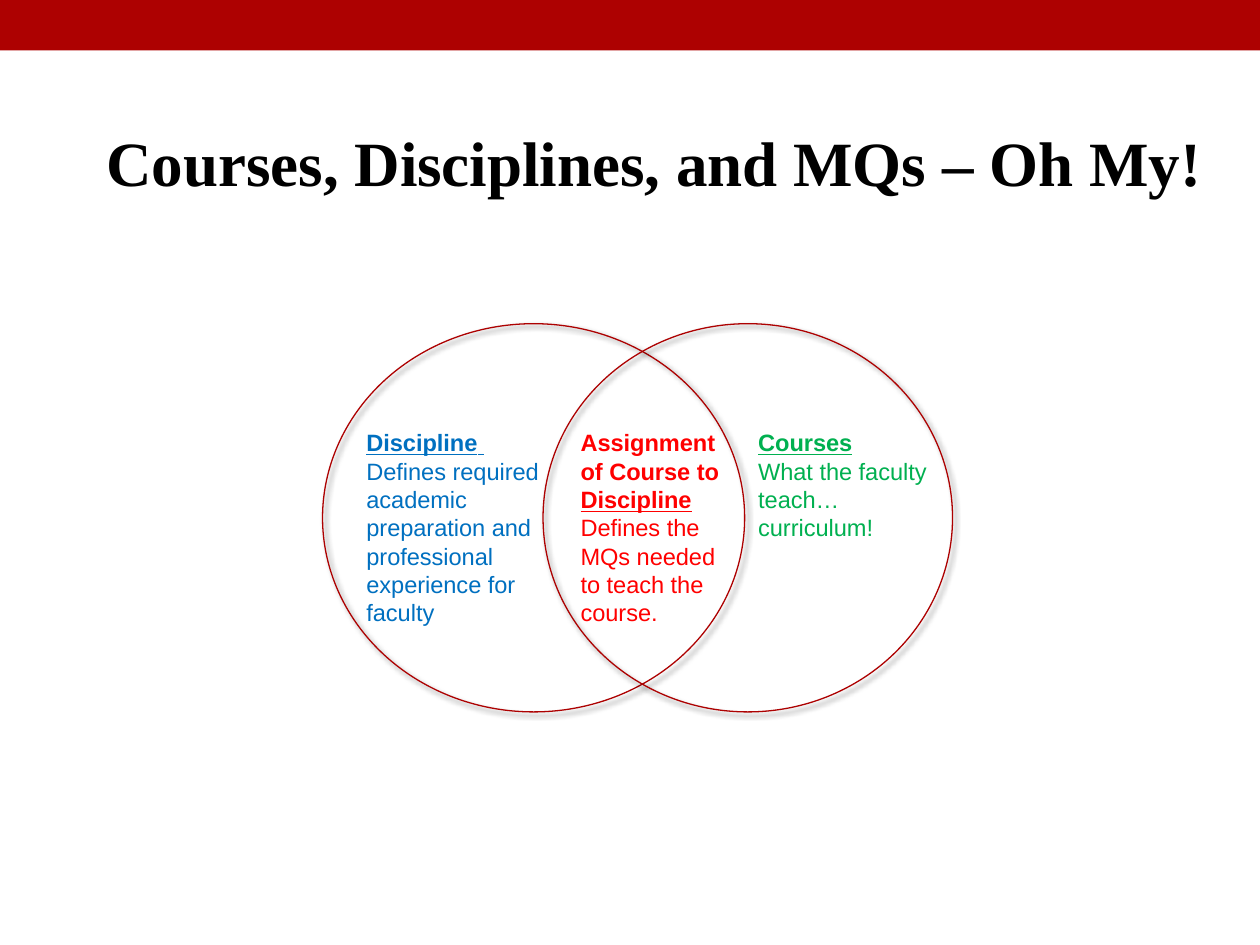
from dataclasses import dataclass

from lxml.etree import SubElement
from pptx import Presentation
from pptx.dml.color import RGBColor as RGB
from pptx.enum.shapes import MSO_SHAPE as SHAPE
from pptx.enum.text import MSO_ANCHOR as ANCHOR, MSO_AUTO_SIZE as AUTO, PP_ALIGN as ALIGN
from pptx.oxml.ns import qn
from pptx.util import Pt


@dataclass(frozen=True)
class Theme:
    """Colours, fonts and type sizes of the slide."""
    accent: RGB = RGB(0xAD, 0x01, 0x01)
    ink: RGB = RGB(0, 0, 0)
    blue: RGB = RGB(0x00, 0x70, 0xC0)
    red: RGB = RGB(0xFF, 0x00, 0x00)
    green: RGB = RGB(0x00, 0xB0, 0x50)
    title_font: str = "Times New Roman"
    body_font: str = "Arial"
    title_size: float = 36
    body_size: float = 13.5


THEME = Theme()
WIDTH, HEIGHT = 720, 540
CIRCLE_TOP, CIRCLE_HEIGHT = 185, 221.8
LABEL_TOP = 241.2


def points(*lengths):
    """Convert lengths in points to slide units."""
    return [Pt(length) for length in lengths]


def style_font(font, name, size, color):
    """Set the family, size and colour of a font."""
    font.name, font.size = name, Pt(size)
    font.color.rgb = color


def add_band(slide):
    """Draw the solid band along the top edge."""
    s = slide.shapes.add_shape(SHAPE.RECTANGLE, *points(0, 0, WIDTH, 28.8))
    s.shadow.inherit = False
    s.fill.solid()
    s.fill.fore_color.rgb = THEME.accent
    s.line.fill.background()


def add_soft_shadow(s):
    """Give a shape a small shadow towards the lower right."""
    s.shadow.inherit = False
    effects = s._element.spPr.find(qn("a:effectLst"))
    shadow = SubElement(effects, qn("a:outerShdw"), blurRad=str(Pt(3)), dist=str(Pt(2)),
                        dir="2700000", algn="tl", rotWithShape="0")
    color = SubElement(shadow, qn("a:srgbClr"), val=str(THEME.ink))
    SubElement(color, qn("a:alpha"), val="60000")


def add_circle(slide, left, width):
    """Draw one outlined circle of the Venn diagram."""
    s = slide.shapes.add_shape(SHAPE.OVAL, *points(left, CIRCLE_TOP, width, CIRCLE_HEIGHT))
    s.fill.background()
    s.line.color.rgb = THEME.accent
    s.line.width = Pt(0.75)
    add_soft_shadow(s)


def add_label(slide, left, width, height, color, paragraphs):
    """Write a label whose runs are (text, bold, underline)."""
    box = slide.shapes.add_textbox(*points(left, LABEL_TOP, width, height))
    tf = box.text_frame
    tf.word_wrap, tf.auto_size = True, AUTO.SHAPE_TO_FIT_TEXT
    for i, runs in enumerate(paragraphs):
        p = tf.add_paragraph() if i else tf.paragraphs[0]
        style_font(p.font, THEME.body_font, THEME.body_size, color)
        for text, bold, underline in runs:
            r = p.add_run()
            r.text = text
            style_font(r.font, THEME.body_font, THEME.body_size, color)
            r.font.bold, r.font.underline = bold, underline


def set_title(slide, text):
    """Fill, place and format the title placeholder."""
    title = slide.shapes.title
    title.left, title.top, title.width, title.height = points(39.6, 67, 668.2, 51.1)
    tf = title.text_frame
    tf.text = text
    tf.word_wrap, tf.auto_size, tf.vertical_anchor = True, AUTO.NONE, ANCHOR.TOP
    p = tf.paragraphs[0]
    p.alignment = ALIGN.CENTER
    p.font.bold = True
    style_font(p.font, THEME.title_font, THEME.title_size, THEME.ink)


def main():
    """Build and save the slide."""
    prs = Presentation()
    prs.slide_width, prs.slide_height = points(WIDTH, HEIGHT)
    slide = prs.slides.add_slide(prs.slide_layouts[5])
    set_title(slide, "Courses, Disciplines, and MQs – Oh My!")
    add_band(slide)
    add_circle(slide, 184.3, 241.2)
    add_circle(slide, 310.3, 234)
    add_label(slide, 202.3, 122.4, 121.7, THEME.blue, [
        [("Discipline", True, True), (" ", False, True)],
        [("Defines required academic preparation and professional experience for faculty",
          False, False)],
    ])
    add_label(slide, 426.2, 118.1, 72.7, THEME.green, [
        [("Courses", True, True)],
        [("What the faculty teach…curriculum!", False, False)],
    ])
    add_label(slide, 324.7, 97.9, 138.2, THEME.red, [
        [("Assignment of Course to ", True, False), ("Discipline", True, True),
         (" Defines the MQs needed to teach the course.", False, False)],
    ])
    prs.save("out.pptx")


if __name__ == "__main__":
    main()
